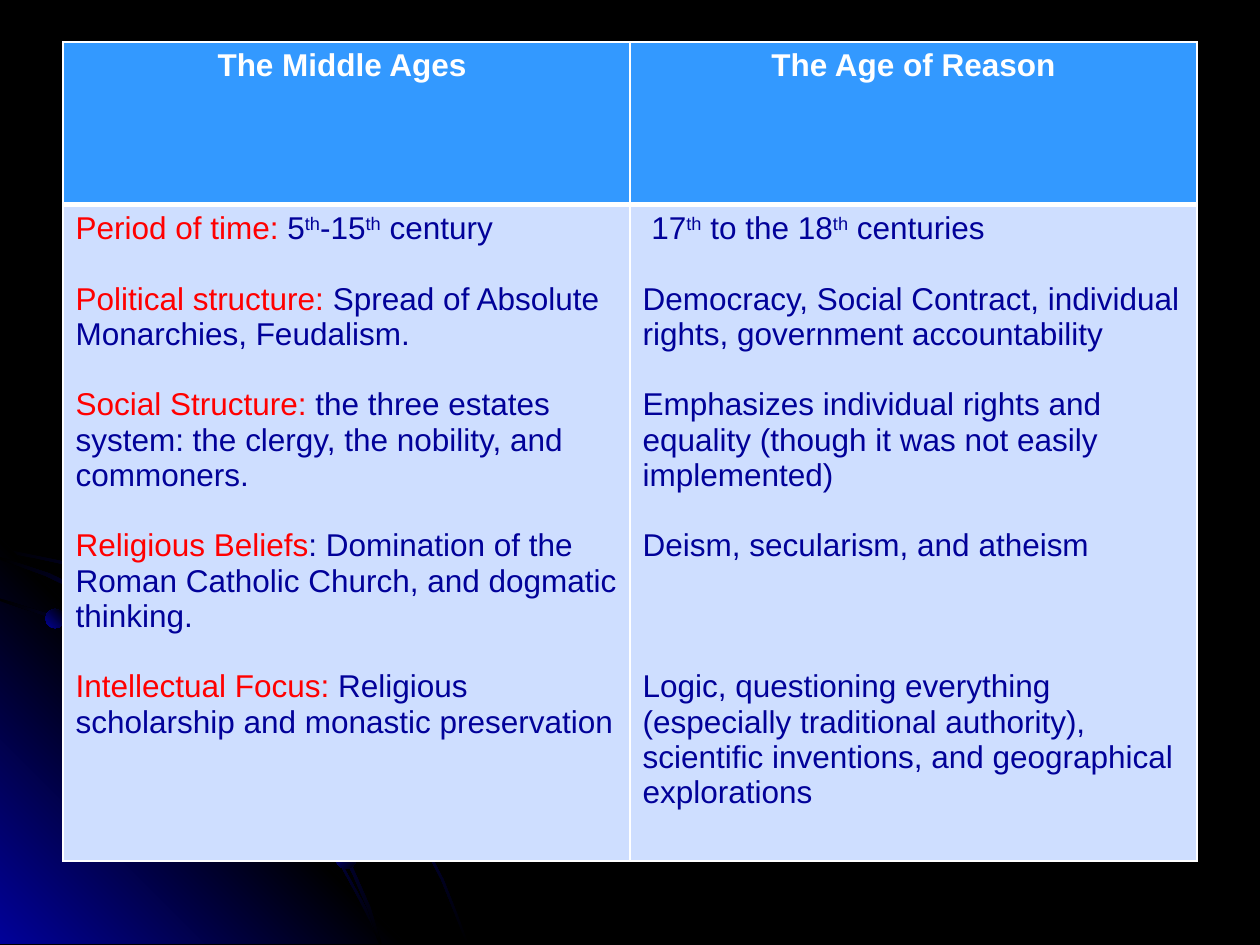
from lxml.etree import SubElement
from pptx import Presentation
from pptx.dml.color import RGBColor
from pptx.enum.shapes import MSO_SHAPE
from pptx.enum.text import PP_ALIGN
from pptx.oxml.ns import qn
from pptx.util import Pt

COLORS = {
    "black": "000000", "navy": "010199", "white": "FFFFFF",
    "red": "FF0000", "header": "3399FF", "body": "CEDEFF",
}
FONT = "Arial"
TEXT_SIZE = 18
LINE_GAP = 20.15
HUNDREDTH_INCH = Pt(0.72)

GLOW = [(0, "navy"), (50, "black"), (100, "navy")]
STREAK = [(0, "black"), (50, "navy"), (100, "black")]
DOT = [(0, "navy"), (100, "black")]

CORNER = [(322, 749), (0, 749), (0, 427)]
WIDE_ARC = [
    (57, 447), (28, 441), (0, 435), (0, 438), (28, 443), (56, 449), (97, 461),
    (135, 478), (173, 499), (208, 523), (241, 549), (271, 579), (298, 612),
    (323, 649), (337, 673), (350, 698), (360, 723), (370, 749), (372, 749),
    (362, 723), (352, 698), (339, 673), (325, 648), (300, 611), (272, 578),
    (242, 548), (209, 521), (174, 497), (136, 477), (98, 459),
]
LOW_ARC = [
    (285, 714), (294, 732), (301, 749), (303, 749), (296, 730), (286, 712),
    (266, 676), (242, 640), (215, 606), (184, 576), (152, 549), (117, 526),
    (79, 505), (41, 488), (0, 475), (0, 477), (39, 490), (77, 507), (115, 528),
    (150, 551), (183, 578), (213, 608), (240, 641), (265, 677),
]
MIDDLE_ARC = [
    (0, 442), (0, 444), (36, 457), (74, 475), (109, 494), (142, 518),
    (173, 544), (202, 575), (227, 605), (252, 641), (267, 667), (280, 694),
    (292, 722), (301, 749), (303, 749), (294, 720), (282, 693), (269, 665),
    (254, 639), (229, 603), (204, 573), (175, 543), (144, 516), (111, 493),
    (76, 473), (39, 455),
]
OUTLINES = [(WIDE_ARC, STREAK, 45), (CORNER, GLOW, 315),
            (LOW_ARC, STREAK, 45), (MIDDLE_ARC, STREAK, 45)]
DOTS = [(26, 348, 11, 315), (192, 485, 11.5, 45), (98.5, 340.5, 15, 315)]

HEADERS = ["The Middle Ages ", "The Age of Reason"]
MIDDLE_AGES = [
    (0, [("Period of time: ", "red"), ("5", "navy"), ("th", "super"),
         ("-15", "navy"), ("th", "super"), (" century", "navy")]),
    (1, [("Political structure: ", "red"),
         ("Spread of Absolute Monarchies, Feudalism.", "navy")]),
    (1, [("Social Structure: ", "red"),
         ("the three estates system: the clergy, the nobility, and commoners.", "navy")]),
    (1, [("Religious Beliefs", "red"),
         (": Domination of the Roman Catholic Church, and dogmatic thinking.", "navy")]),
    (1, [("Intellectual Focus: ", "red"),
         ("Religious scholarship and monastic preservation", "navy")]),
]
AGE_OF_REASON = [
    (0, [(" 17", "navy"), ("th", "super"), (" to the 18", "navy"),
         ("th", "super"), (" centuries", "navy")]),
    (1, [("Democracy, Social Contract, individual rights, "
          "government accountability", "navy")]),
    (1, [("Emphasizes individual rights and equality "
          "(though it was not easily implemented)", "navy")]),
    (1, [("Deism, secularism, and atheism", "navy")]),
    (3, [("Logic, questioning everything (especially traditional authority), "
          "scientific inventions, and geographical explorations", "navy")]),
]


def rgb(name):
    return RGBColor.from_string(COLORS[name])


class SlideBuilder:
    def __init__(self, slide):
        self.slide = slide
        self.slide.background.fill.solid()
        self.slide.background.fill.fore_color.rgb = rgb("black")

    def gradient(self, shape, stops, angle):
        shape.shadow.inherit = False
        shape.line.fill.background()
        shape.fill.gradient()
        shape.fill.gradient_angle = 360 - angle
        stop_list = shape._element.spPr.find(".//" + qn("a:gsLst"))
        for stop in list(stop_list):
            stop_list.remove(stop)
        for position, color in stops:
            stop = SubElement(stop_list, qn("a:gs"), pos=str(position * 1000))
            SubElement(stop, qn("a:srgbClr"), val=COLORS[color])

    def outline(self, points, stops, angle):
        builder = self.slide.shapes.build_freeform(*points[0], scale=HUNDREDTH_INCH)
        builder.add_line_segments(points[1:], close=True)
        self.gradient(builder.convert_to_shape(), stops, angle)

    def dot(self, left, top, size, angle):
        shape = self.slide.shapes.add_shape(
            MSO_SHAPE.OVAL, Pt(left), Pt(top), Pt(size), Pt(size))
        self.gradient(shape, DOT, angle)

    def table(self, left, top, column_widths, row_heights):
        frame = self.slide.shapes.add_table(
            len(row_heights), len(column_widths), Pt(left), Pt(top),
            Pt(sum(column_widths)), Pt(sum(row_heights)))
        table = frame.table
        for column, width in zip(table.columns, column_widths):
            column.width = Pt(width)
        for row, height in zip(table.rows, row_heights):
            row.height = Pt(height)
        return table

    def cell_style(self, cell, fill, top, bottom):
        cell.fill.solid()
        cell.fill.fore_color.rgb = rgb(fill)
        properties = cell._tc.get_or_add_tcPr()
        widths = {"a:lnL": 1, "a:lnR": 1, "a:lnT": top, "a:lnB": bottom}
        for index, (tag, width) in enumerate(widths.items()):
            border = SubElement(properties, qn(tag), w=str(Pt(width)))
            solid = SubElement(border, qn("a:solidFill"))
            SubElement(solid, qn("a:srgbClr"), val=COLORS["white"])
            properties.insert(index, border)

    def format_span(self, span, color, bold):
        span.font.name = FONT
        span.font.size = Pt(TEXT_SIZE)
        span.font.bold = bold
        span.font.color.rgb = rgb(color)

    def header_cell(self, cell, text):
        self.cell_style(cell, "header", 1, 3)
        cell.text_frame.text = text
        para = cell.text_frame.paragraphs[0]
        para.alignment = PP_ALIGN.CENTER
        self.format_span(para.runs[0], "white", True)

    def body_cell(self, cell, entries):
        self.cell_style(cell, "body", 3, 1)
        frame = cell.text_frame
        for index, (gap_lines, pieces) in enumerate(entries):
            para = frame.add_paragraph() if index else frame.paragraphs[0]
            para.space_before = Pt(gap_lines * LINE_GAP)
            for text, style in pieces:
                span = para.add_run()
                span.text = text
                raised = style == "super"
                self.format_span(span, "navy" if raised else style, False)
                if raised:
                    span.font._element.set("baseline", "30000")


def main():
    deck = Presentation()
    deck.slide_width, deck.slide_height = Pt(720), Pt(540)
    page = SlideBuilder(deck.slides.add_slide(deck.slide_layouts[6]))
    for points, stops, angle in OUTLINES:
        page.outline(points, stops, angle)
    for dot in DOTS:
        page.dot(*dot)
    table = page.table(36, 24, [324, 324], [93, 375])
    for column, text in enumerate(HEADERS):
        page.header_cell(table.cell(0, column), text)
    for column, entries in enumerate([MIDDLE_AGES, AGE_OF_REASON]):
        page.body_cell(table.cell(1, column), entries)
    deck.save("out.pptx")


if __name__ == "__main__":
    main()
